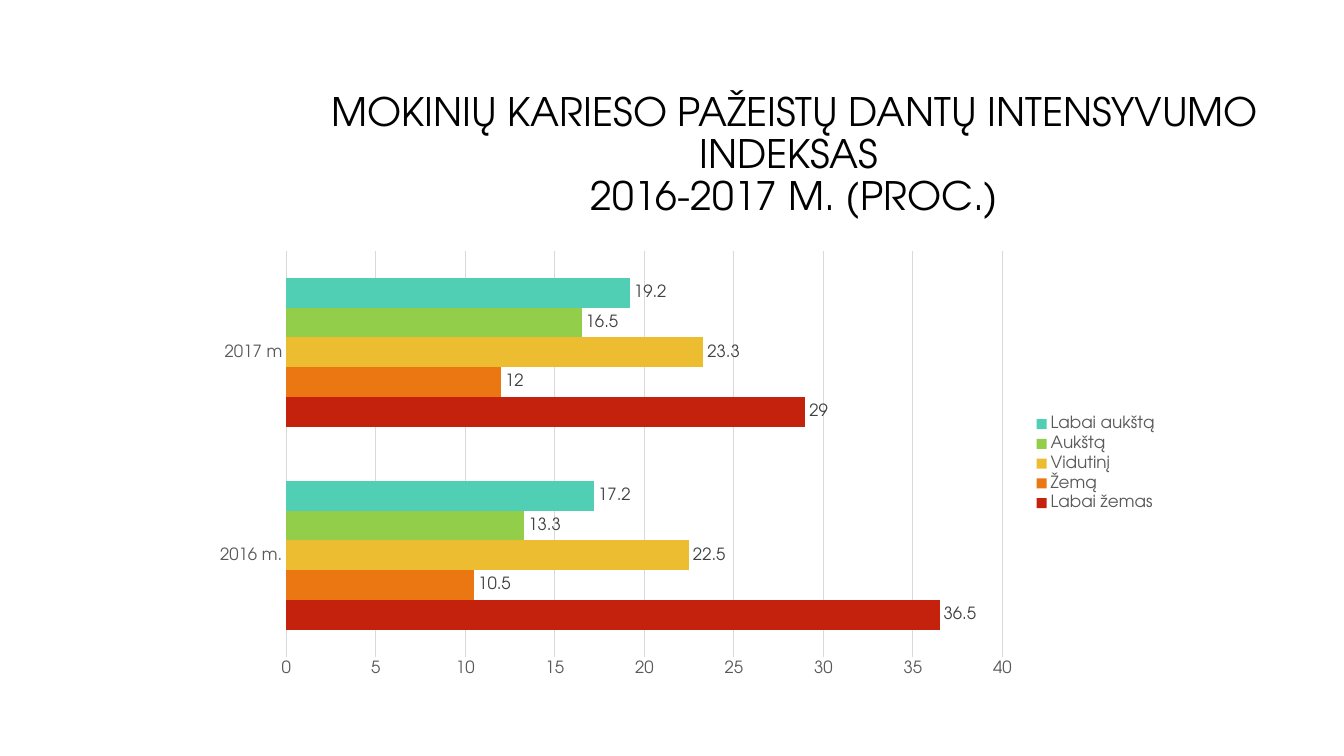
import pptx
import pptx.util
import pptx.chart.data
import pptx.dml.color
import pptx.enum.chart
import pptx.enum.text
from dataclasses import dataclass
from pptx.util import Inches


@dataclass(frozen=True)
class Theme:
    font: str = "TeX Gyre Adventor"
    title: str = "000000"
    axis: str = "595959"
    label: str = "404040"
    grid: str = "D9D9D9"
    title_size: int = 28
    chart_size: int = 10
    label_size: int = 12
    line_width: float = 0.75


class SlideBuilder:
    def __init__(self, s, theme):
        self.s = s
        self.theme = theme

    def style_font(self, font, size, color):
        font.name = self.theme.font
        font.size = pptx.util.Pt(size)
        font.bold = False
        font.color.rgb = pptx.dml.color.RGBColor.from_string(color)

    def style_line(self, line):
        line.width = pptx.util.Pt(self.theme.line_width)
        line.color.rgb = pptx.dml.color.RGBColor.from_string(self.theme.grid)

    def title(self, text, left, top, width, height):
        sp = self.s.shapes.add_textbox(left, top, width, height)
        tf = sp.text_frame
        tf.word_wrap = True
        tf.vertical_anchor = pptx.enum.text.MSO_ANCHOR.MIDDLE
        p = tf.paragraphs[0]
        p.text = text
        p.alignment = pptx.enum.text.PP_ALIGN.CENTER
        p.line_spacing = 0.9
        self.style_font(p.font, self.theme.title_size, self.theme.title)

    def bar_chart(self, categories, series, left, top, width, height):
        t = self.theme
        data = pptx.chart.data.CategoryChartData()
        data.categories = categories
        for name, values, _ in series:
            data.add_series(name, values)
        kind = pptx.enum.chart.XL_CHART_TYPE.BAR_CLUSTERED
        chart = self.s.shapes.add_chart(kind, left, top, width, height, data).chart
        chart.has_title = False
        self.style_font(chart.font, t.chart_size, t.title)

        chart.has_legend = True
        chart.legend.position = pptx.enum.chart.XL_LEGEND_POSITION.RIGHT
        chart.legend.include_in_layout = False
        self.style_font(chart.legend.font, t.label_size, t.axis)

        for axis in (chart.category_axis, chart.value_axis):
            axis.major_tick_mark = pptx.enum.chart.XL_TICK_MARK.NONE
            axis.minor_tick_mark = pptx.enum.chart.XL_TICK_MARK.NONE
            self.style_font(axis.tick_labels.font, t.label_size, t.axis)
        chart.category_axis.has_major_gridlines = False
        self.style_line(chart.category_axis.format.line)
        chart.value_axis.format.line.fill.background()
        chart.value_axis.has_major_gridlines = True
        self.style_line(chart.value_axis.major_gridlines.format.line)

        plot = chart.plots[0]
        plot.gap_width = 182
        plot.overlap = 0
        plot.vary_by_categories = False
        for bars, (_, _, color) in zip(plot.series, series):
            bars.format.fill.solid()
            bars.format.fill.fore_color.rgb = pptx.dml.color.RGBColor.from_string(color)
            bars.invert_if_negative = False
            labels = bars.data_labels
            labels.show_value = True
            labels.position = pptx.enum.chart.XL_LABEL_POSITION.OUTSIDE_END
            self.style_font(labels.font, t.label_size, t.label)


def main():
    prs = pptx.Presentation()
    prs.slide_width = Inches(13.33)
    prs.slide_height = Inches(7.5)
    slide = SlideBuilder(prs.slides.add_slide(prs.slide_layouts[6]), Theme())

    slide.title(
        "MOKINIŲ KARIESO PAŽEISTŲ DANTŲ INTENSYVUMO INDEKSAS \v2016-2017 M. (PROC.)",
        Inches(3.17), Inches(0.84), Inches(9.42), Inches(1.41),
    )
    intensity_levels = [
        ("Labai žemas", (36.5, 29), "C4220D"),
        ("Žemą", (10.5, 12), "EB7712"),
        ("Vidutinį", (22.5, 23.3), "ECBD31"),
        ("Aukštą", (13.3, 16.5), "92CE4A"),
        ("Labai aukštą", (17.2, 19.2), "50CFB4"),
    ]
    slide.bar_chart(
        ["2016 m.", "2017 m"], intensity_levels,
        Inches(1.99), Inches(2.4), Inches(9.6), Inches(4.4),
    )
    prs.save("out.pptx")


if __name__ == "__main__":
    main()
